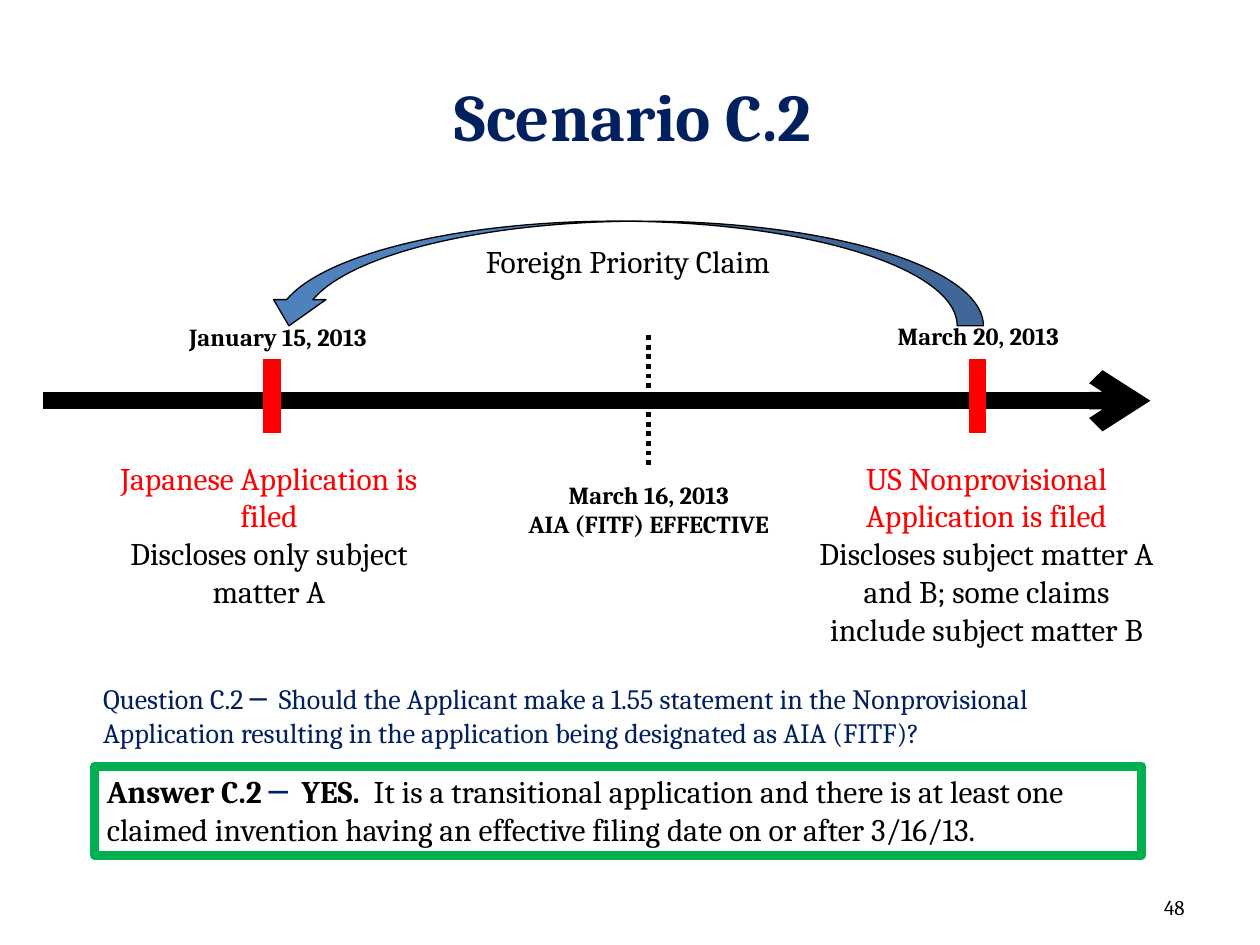
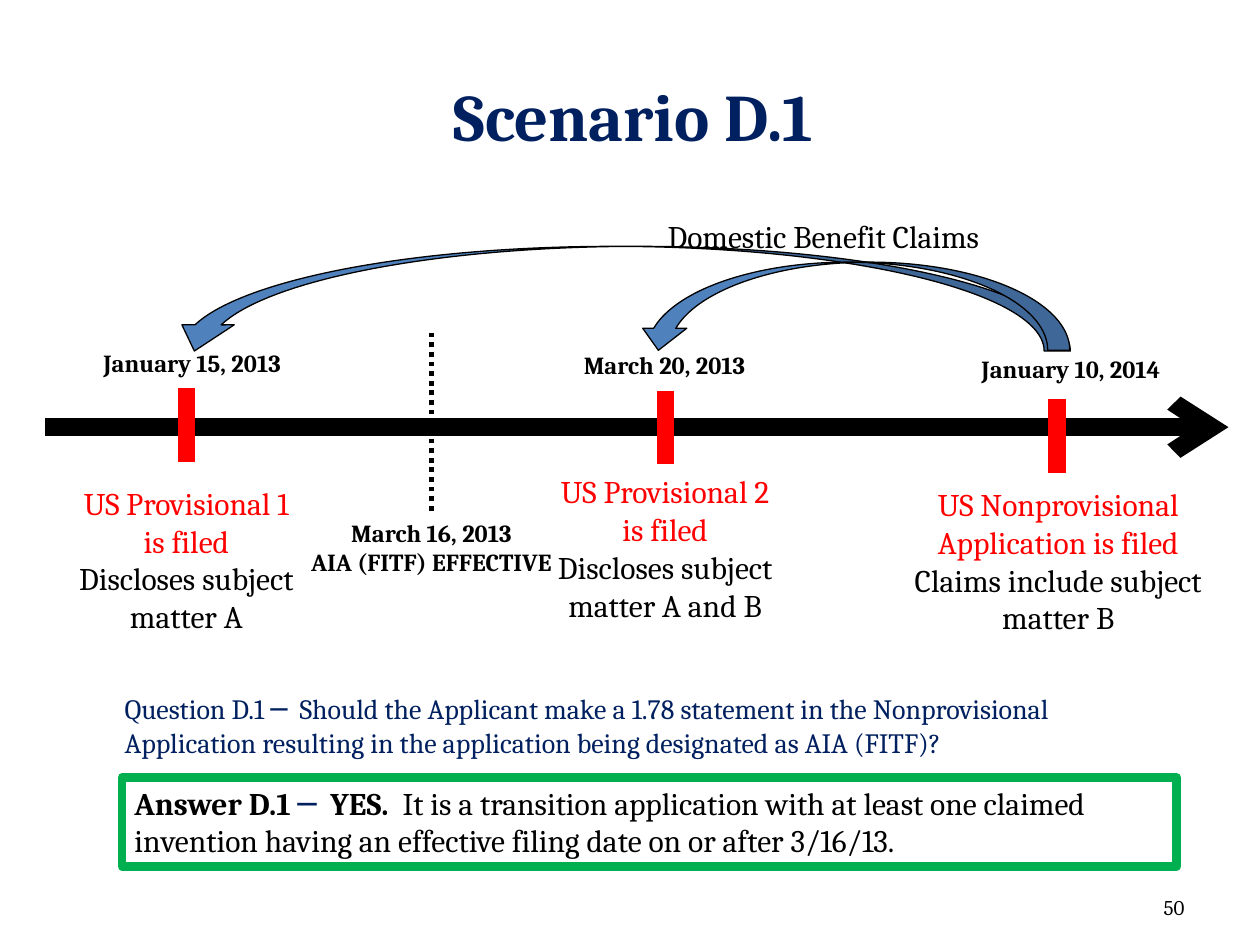
from pptx import Presentation
from pptx.dml.color import RGBColor
from pptx.enum.dml import MSO_LINE
from pptx.enum.shapes import MSO_CONNECTOR, MSO_SHAPE
from pptx.enum.text import MSO_ANCHOR, MSO_AUTO_SIZE, PP_ALIGN
from pptx.oxml.ns import qn
from pptx.util import Pt
from lxml import etree

NAVY = RGBColor(0x00, 0x20, 0x60)
BLACK = RGBColor(0x00, 0x00, 0x00)
RED = RGBColor(0xFF, 0x00, 0x00)
GREEN = RGBColor(0x00, 0xB0, 0x50)
BLUE = RGBColor(0x4F, 0x81, 0xBD)

STRAIGHT = MSO_CONNECTOR.STRAIGHT
CURVED_ARROW = MSO_SHAPE.CURVED_RIGHT_ARROW
RECTANGLE = MSO_SHAPE.RECTANGLE
DOTTED = MSO_LINE.ROUND_DOT
LEFT, CENTER, RIGHT = PP_ALIGN.LEFT, PP_ALIGN.CENTER, PP_ALIGN.RIGHT
TOP, MIDDLE, BOTTOM = MSO_ANCHOR.TOP, MSO_ANCHOR.MIDDLE, MSO_ANCHOR.BOTTOM
GROW, FIXED = MSO_AUTO_SIZE.SHAPE_TO_FIT_TEXT, MSO_AUTO_SIZE.NONE

FONT = "Cambria"
TITLE_SIZE, BODY_SIZE, QUESTION_SIZE, DATE_SIZE, NUMBER_SIZE = 38, 18, 16, 14, 12
DATE_HEIGHT, NOTE_HEIGHT, MARK_HEIGHT = 24.5, 94.3, 42
EFFECTIVE_WIDTH = 158.4


class ScenarioDeck:
    """Holds the shared style and the slide being built."""

    def __init__(self):
        self.prs = Presentation()
        self.prs.slide_width, self.prs.slide_height = Pt(720), Pt(540)
        self.slide = None

    def start(self, title, number):
        self.slide = self.prs.slides.add_slide(self.prs.slide_layouts[6])
        self.text((67.7, 23.8, 588.2, 84.2), [[(title, NAVY, True)]],
                  TITLE_SIZE, CENTER, MIDDLE, FIXED)
        self.text((516.2, 491.8, 167.8, 37.4), [[(number, BLACK, False)]],
                  NUMBER_SIZE, RIGHT, BOTTOM, FIXED)

    def fill_text(self, shape, paragraphs, size, align, anchor=TOP, fit=GROW):
        """Each paragraph is a list of (text, colour, bold) runs."""
        frame = shape.text_frame
        frame.word_wrap = True
        frame.auto_size = fit
        frame.vertical_anchor = anchor
        for index, runs in enumerate(paragraphs):
            paragraph = frame.add_paragraph() if index else frame.paragraphs[0]
            paragraph.alignment = align
            for words, color, bold in runs:
                run = paragraph.add_run()
                run.text = words
                run.font.name = FONT
                run.font.size = Pt(size)
                run.font.bold = bold
                run.font.color.rgb = color

    def text(self, box, paragraphs, size, align=CENTER, anchor=TOP, fit=GROW):
        shape = self.slide.shapes.add_textbox(*map(Pt, box))
        self.fill_text(shape, paragraphs, size, align, anchor, fit)

    def line(self, start, end, color, width, dash=None, arrow=False):
        line = self.slide.shapes.add_connector(STRAIGHT, *map(Pt, start + end))
        line.line.color.rgb = color
        line.line.width = Pt(width)
        if dash:
            line.line.dash_style = dash
        if arrow:
            outline = line.line._get_or_add_ln()
            etree.SubElement(outline, qn("a:tailEnd"), type="arrow")
        etree.SubElement(line._element.spPr, qn("a:effectLst"))

    def claim_arc(self, left, top, width, height):
        """Arrow curving back in time, given by the frame it fills once turned."""
        turned_left = left + (width - height) / 2
        turned_top = top + (height - width) / 2
        arc = self.slide.shapes.add_shape(
            CURVED_ARROW, Pt(turned_left), Pt(turned_top), Pt(height), Pt(width))
        arc.rotation = 90
        arc.shadow.inherit = False
        arc.fill.solid()
        arc.fill.fore_color.rgb = BLUE
        arc.line.color.rgb = BLACK
        arc.line.width = Pt(0.75)

    def timeline(self, left, right, y):
        self.line((left, y), (right, y), BLACK, 10, arrow=True)

    def claim_label(self, words, left, top, width):
        self.text((left, top, width, 29), [[(words, BLACK, False)]], BODY_SIZE)

    def filing(self, mark, date, date_box, filed, discloses, note_box):
        """A red mark, its date above and its description below."""
        x, y = mark
        self.line((x, y), (x, y + MARK_HEIGHT), RED, 10)
        self.text(date_box + (DATE_HEIGHT,), [[(date, BLACK, True)]], DATE_SIZE)
        note = [[(words, RED, False)] for words in filed]
        note.append([(discloses, BLACK, False)])
        self.text(note_box + (NOTE_HEIGHT,), note, BODY_SIZE)

    def effective_date(self, x, top, bottom, label_top):
        self.line((x, top), (x, bottom), BLACK, 2.75, DOTTED)
        label = ["March 16, 2013", "AIA (FITF) EFFECTIVE"]
        self.text((x - EFFECTIVE_WIDTH / 2, label_top, EFFECTIVE_WIDTH, 58.3),
                  [[(words, BLACK, True)] for words in label], DATE_SIZE)

    def question(self, box, scenario, rule):
        ask = (f" Should the Applicant make a {rule} statement in the Nonprovisional "
               "Application resulting in the application being designated as AIA (FITF)?")
        self.text(box, [[(f"Question {scenario}", NAVY, False), (" ─ ", NAVY, True),
                         (ask, NAVY, False)]], QUESTION_SIZE, LEFT)

    def answer(self, box, scenario, reason):
        frame = self.slide.shapes.add_shape(RECTANGLE, *map(Pt, box))
        frame.shadow.inherit = False
        frame.fill.background()
        frame.line.color.rgb = GREEN
        frame.line.width = Pt(5)
        self.fill_text(frame, [[(f"Answer {scenario}", BLACK, True), (" ─", NAVY, True),
                                ("  YES.  ", BLACK, True), (reason, BLACK, False)]],
                       BODY_SIZE, LEFT)


def scenario_c2(deck):
    deck.start("Scenario C.2", "48")

    # Timeline and priority claim
    deck.claim_arc(150.1, 126.4, 411.8, 59.8)
    deck.timeline(24.5, 657.4, 229)
    deck.claim_label("Foreign Priority Claim", 257, 134.6, 203.8)
    deck.effective_date(370.8, 191.5, 267.1, 270.7)

    # Filings
    deck.filing((155.5, 205.2), "January 15, 2013", (88.6, 180.7, 140.4),
                ["Japanese Application is filed"],
                "Discloses only subject matter A", (58.3, 258.5, 190.8))
    deck.filing((558.7, 205.2), "March 20, 2013", (495.4, 180, 127.4),
                ["US Nonprovisional Application is filed"],
                "Discloses subject matter A and B; some claims include subject matter B",
                (457.2, 258.5, 213.1))

    # Question and answer
    deck.question((51.8, 385.9, 608.4, 46), "C.2", "1.55")
    deck.answer((54, 437.8, 598.3, 51), "C.2",
                "It is a transitional application and there is at least one claimed "
                "invention having an effective filing date on or after 3/16/13.")


def scenario_d1(deck):
    deck.start("Scenario D.1", "50")

    # Timeline and benefit claims
    deck.claim_arc(96.1, 140.8, 515.5, 59.8)
    deck.timeline(25.9, 702, 244.1)
    deck.effective_date(246.6, 190.1, 292.3, 292.3)
    deck.claim_arc(363.6, 149.8, 247.7, 50.4)

    # Filings
    deck.filing((106.6, 221.8), "January 15, 2013", (39.6, 195.1, 140.4),
                ["US Provisional 1", "is filed"],
                "Discloses subject matter A", (19.4, 272.9, 174.2))
    deck.filing((380.2, 223.2), "March 20, 2013", (316.1, 196.6, 127.4),
                ["US Provisional 2", "is filed"],
                "Discloses subject matter A and B", (293, 266.4, 174.2))
    deck.filing((604.1, 228.2), "January 10, 2014", (533.5, 198.7, 157),
                ["US Nonprovisional Application is filed"],
                "Claims include subject matter B", (498.2, 273.6, 213.1))
    deck.claim_label("Domestic Benefit Claims", 335.5, 120.2, 270)

    # Question and answer
    deck.question((64.1, 391.7, 619.9, 46), "D.1", "1.78")
    deck.answer((69.8, 444.2, 602.6, 51), "D.1",
                "It is a transition application with at least one claimed "
                "invention having an effective filing date on or after 3/16/13.")


def main():
    deck = ScenarioDeck()
    scenario_c2(deck)
    scenario_d1(deck)
    deck.prs.save("out.pptx")


if __name__ == "__main__":
    main()
